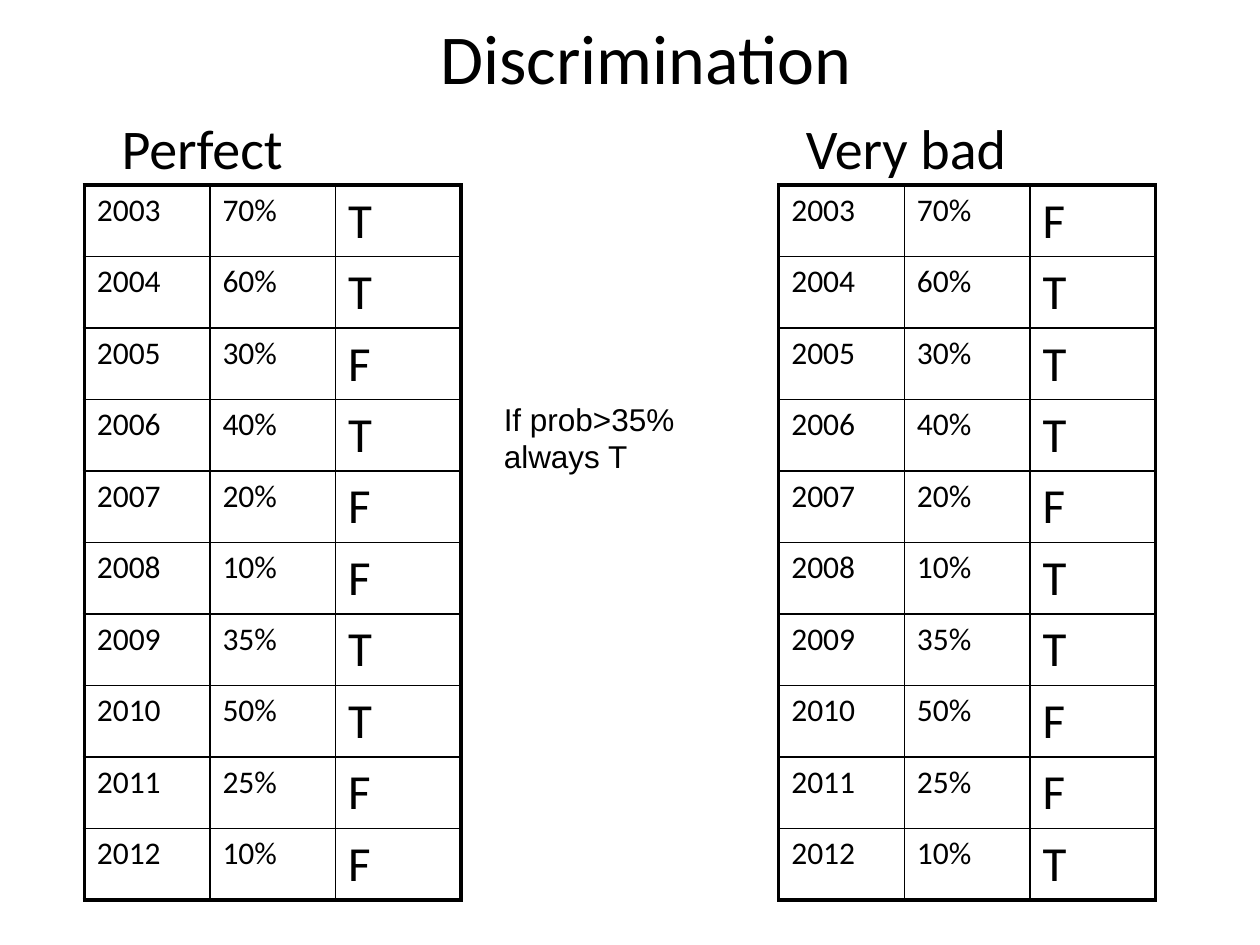
from dataclasses import dataclass

from lxml.etree import SubElement
from pptx import Presentation
from pptx.dml.color import RGBColor
from pptx.enum.text import PP_ALIGN
from pptx.oxml.ns import qn
from pptx.util import Pt


@dataclass(frozen=True)
class Theme:
    ink: str = "000000"
    main: str = "Calibri"
    note: str = "Arial"
    title: int = 40
    head: int = 32
    mark: int = 28
    body: int = 18
    thin: float = 1
    thick: float = 2.25


THEME = Theme()
YEARS = range(2003, 2013)
PROBS = [70, 60, 30, 40, 20, 10, 35, 50, 25, 10]


def set_text(frame, text, size, font=THEME.main, align=PP_ALIGN.LEFT):
    frame.text = text
    for para in frame.paragraphs:
        para.alignment = align
        for run in para.runs:
            run.font.name = font
            run.font.size = Pt(size)
            run.font.color.rgb = RGBColor.from_string(THEME.ink)


def add_text(slide, box, text, size, **style):
    frame = slide.shapes.add_textbox(*map(Pt, box)).text_frame
    frame.word_wrap = True
    set_text(frame, text, size, **style)


def set_edges(cell, outer):
    props = cell._tc.get_or_add_tcPr()
    for side, is_outer in zip("LRTB", outer):
        width = THEME.thick if is_outer else THEME.thin
        line = SubElement(props, qn(f"a:ln{side}"), w=str(Pt(width)))
        fill = SubElement(line, qn("a:solidFill"))
        SubElement(fill, qn("a:srgbClr"), val=THEME.ink)
    cell.fill.background()


def add_grid(slide, box, rows):
    tall, wide = len(rows), len(rows[0])
    table = slide.shapes.add_table(tall, wide, *map(Pt, box)).table
    table.first_row = table.horz_banding = False
    for col in table.columns:
        col.width = Pt(box[2] / wide)
    for row in table.rows:
        row.height = Pt(box[3] / tall)
    for r, row in enumerate(rows):
        for c, text in enumerate(row):
            cell = table.cell(r, c)
            size = THEME.mark if c == wide - 1 else THEME.body
            set_text(cell.text_frame, text, size)
            set_edges(cell, (c == 0, c == wide - 1, r == 0, r == tall - 1))


def add_panel(slide, box, head, indent, marks):
    left, top, width, height = box
    add_text(slide, (left + indent, top - 44.4, width - indent, 44),
             head, THEME.head)
    rows = [(str(year), f"{prob}%", mark)
            for year, prob, mark in zip(YEARS, PROBS, marks)]
    add_grid(slide, box, rows)


def main():
    deck = Presentation()
    deck.slide_width, deck.slide_height = Pt(720), Pt(540)
    slide = deck.slides.add_slide(deck.slide_layouts[6])
    add_text(slide, (54, 5, 630, 56), "Discrimination", THEME.title,
             align=PP_ALIGN.CENTER)
    panels = [(48.2, "Perfect", 14.2, "TTFTFFTTFF"),
              (445, "Very bad", 8.4, "FTTTFTTFFT")]
    for left, head, indent, marks in panels:
        add_panel(slide, (left, 105.8, 215.4, 408), head, indent, marks)
    add_text(slide, (280.8, 224.8, 124.6, 50.4), "If prob>35% always T",
             THEME.body, font=THEME.note)
    deck.save("out.pptx")


if __name__ == "__main__":
    main()
